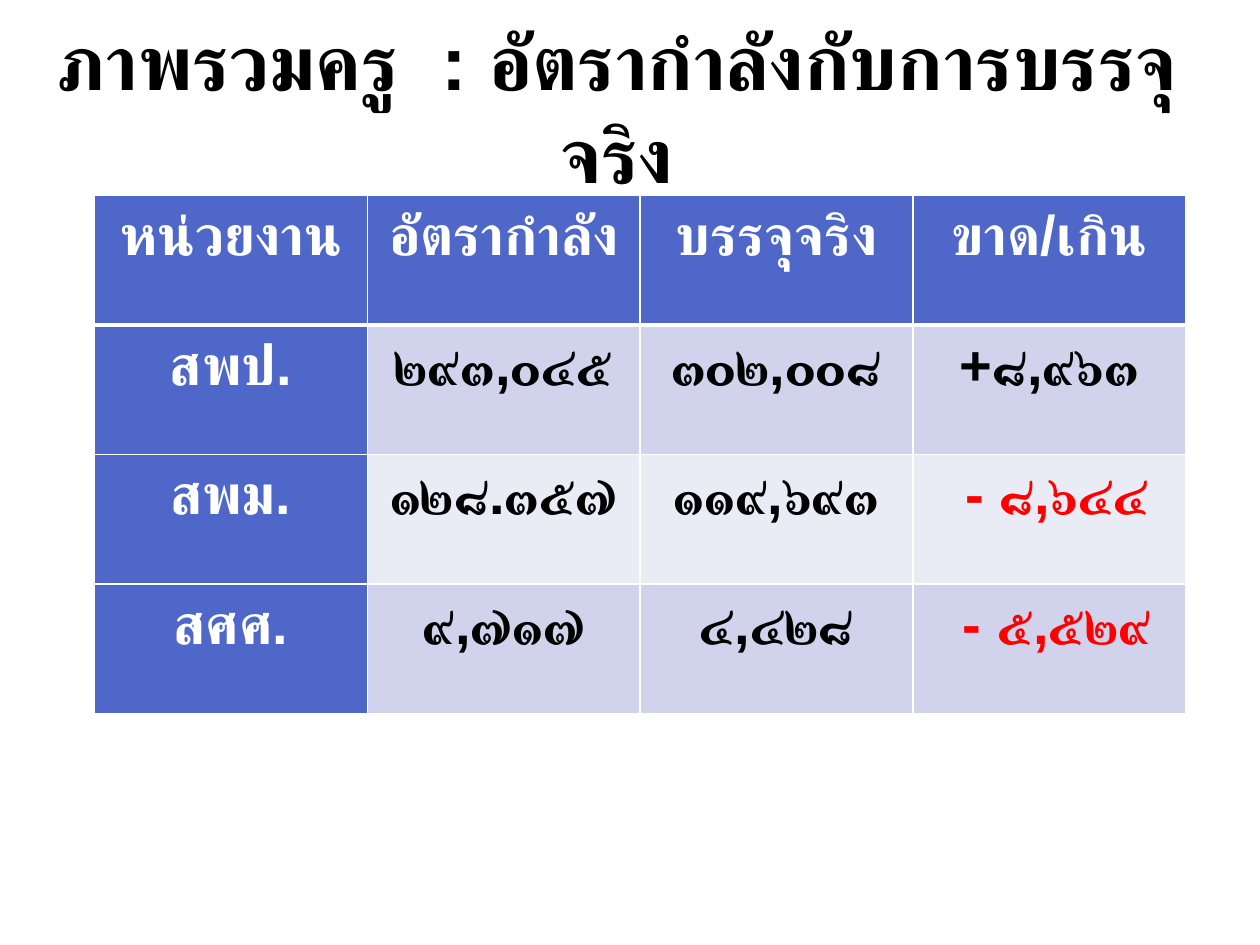
from lxml.etree import SubElement
from pptx import Presentation
from pptx.dml.color import RGBColor
from pptx.enum.text import MSO_ANCHOR, PP_ALIGN
from pptx.oxml.ns import qn
from pptx.util import Inches, Pt

COLORS = {
    "ink": "000000",
    "paper": "FFFFFF",
    "heading": "4E67C8",
    "band_dark": "D0D3EB",
    "band_light": "E9EBF5",
    "shortage": "FF0000",
}
FONT = "Arial"
TITLE = "ภาพรวมครู  : อัตรากำลังกับการบรรจุจริง"
STAFFING = [
    ["หน่วยงาน", "อัตรากำลัง", "บรรจุจริง", "ขาด/เกิน"],
    ["สพป.", "๒๙๓,๐๔๕", "๓๐๒,๐๐๘", "+๘,๙๖๓"],
    ["สพม.", "๑๒๘.๓๕๗", "๑๑๙,๖๙๓", " - ๘,๖๔๔"],
    ["สศศ.", "๙,๗๑๗", "๔,๔๒๘", " - ๕,๕๒๙"],
]


def write(frame, text, size, color, line_spacing=None):
    paragraph = frame.paragraphs[0]
    paragraph.alignment = PP_ALIGN.CENTER
    if line_spacing:
        paragraph.line_spacing = line_spacing
    run = paragraph.add_run()
    run.text = text
    font = run.font
    font.name, font.size, font.bold = FONT, Pt(size), True
    font.color.rgb = RGBColor.from_string(COLORS[color])
    # Thai letters take the complex-script typeface
    SubElement(font._element, qn("a:cs"), typeface=FONT)


def set_borders(cell, bottom_width):
    """Draw white cell edges; they must precede the fill in the XML."""
    properties = cell._tc.get_or_add_tcPr()
    for side, width in (("L", 1), ("R", 1), ("T", 1), ("B", bottom_width)):
        edge = SubElement(properties, qn(f"a:ln{side}"), w=str(Pt(width)))
        fill = SubElement(edge, qn("a:solidFill"))
        SubElement(fill, qn("a:srgbClr"), val=COLORS["paper"])


def add_title(slide, box):
    frame = slide.shapes.add_textbox(*box).text_frame
    frame.word_wrap = True
    frame.vertical_anchor = MSO_ANCHOR.MIDDLE
    write(frame, TITLE, size=44, color="ink")


def cell_colors(row, column, text):
    """Return the fill and text colour names of a cell."""
    if row == 0 or column == 0:
        return "heading", "paper"
    band = "band_dark" if row % 2 else "band_light"
    return band, "shortage" if "-" in text else "ink"


def add_staffing_table(slide, box):
    left, top, width, height = box
    row_count, column_count = len(STAFFING), len(STAFFING[0])
    table = slide.shapes.add_table(row_count, column_count, *box).table
    for column in table.columns:
        column.width = width // column_count
    for row in table.rows:
        row.height = height // row_count
    for row, values in enumerate(STAFFING):
        for column, text in enumerate(values):
            cell = table.cell(row, column)
            fill, ink = cell_colors(row, column, text)
            cell.margin_left = cell.margin_right = Inches(0.07)
            cell.margin_top = cell.margin_bottom = 0
            set_borders(cell, bottom_width=3 if row == 0 else 1)
            cell.fill.solid()
            cell.fill.fore_color.rgb = RGBColor.from_string(COLORS[fill])
            write(cell.text_frame, text, size=32, color=ink, line_spacing=1.15)


def main():
    deck = Presentation()
    deck.slide_width, deck.slide_height = Inches(10), Inches(7.5)
    slide = deck.slides.add_slide(deck.slide_layouts[6])

    def share(left, top, width, height):
        """Turn shares of the slide into a box."""
        return (int(deck.slide_width * left), int(deck.slide_height * top),
                int(deck.slide_width * width), int(deck.slide_height * height))

    add_title(slide, share(0.02, 0.039, 0.939, 0.147))
    add_staffing_table(slide, share(0.075, 0.207, 0.866, 0.548))
    deck.save("out.pptx")


if __name__ == "__main__":
    main()
